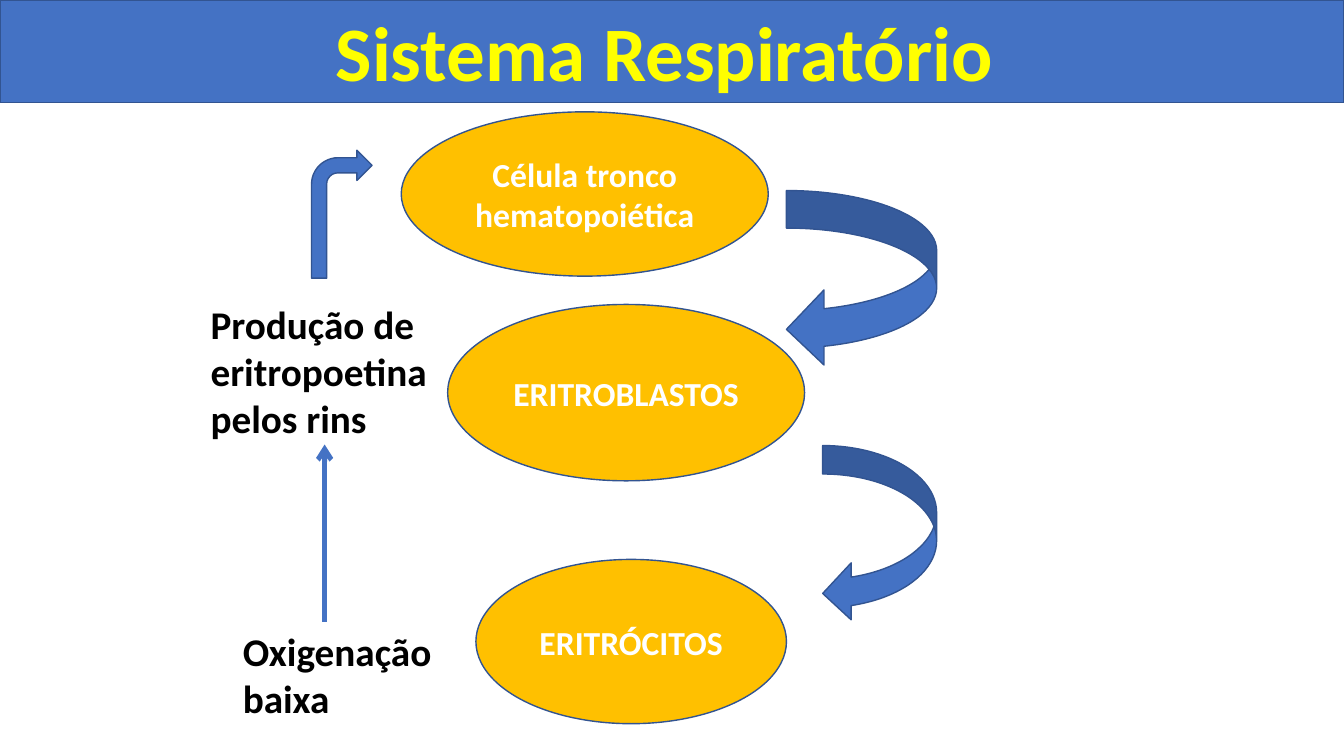
from dataclasses import dataclass

from lxml.etree import SubElement
from pptx import Presentation
from pptx.dml.color import RGBColor
from pptx.enum.shapes import MSO_CONNECTOR, MSO_SHAPE
from pptx.enum.text import MSO_ANCHOR, PP_ALIGN
from pptx.oxml.ns import qn
from pptx.util import Inches, Pt


@dataclass(frozen=True)
class Theme:
    font: str = "Calibri"
    blue: RGBColor = RGBColor(0x44, 0x72, 0xC4)
    edge: RGBColor = RGBColor(0x32, 0x54, 0x91)
    gold: RGBColor = RGBColor(0xFF, 0xC0, 0x00)
    yellow: RGBColor = RGBColor(0xFF, 0xFF, 0x00)
    white: RGBColor = RGBColor(0xFF, 0xFF, 0xFF)
    black: RGBColor = RGBColor(0, 0, 0)
    title: int = 55
    label: int = 28
    cell: int = 24


THEME = Theme()

CELLS = [
    ("Célula tronco hematopoiética", (3.98, 1.11, 3.64, 1.63)),
    ("ERITROBLASTOS", (4.44, 3.02, 3.54, 1.75)),
    ("ERITRÓCITOS", (4.72, 5.55, 3.08, 1.63)),
]
LABELS = [
    ("Oxigenação baixa", (2.31, 6.17, 2.23, 1.04)),
    ("Produção de eritropoetina pelos rins", (1.99, 2.93, 2.45, 1.51)),
]
ARROWS = [
    (MSO_SHAPE.BENT_ARROW, (3.09, 1.49, 0.6, 1.27)),
    (MSO_SHAPE.CURVED_LEFT_ARROW, (7.8, 1.89, 1.49, 1.75)),
    (MSO_SHAPE.CURVED_LEFT_ARROW, (8.16, 4.42, 1.13, 1.75)),
]


def write(frame, text, size, color, align=PP_ALIGN.LEFT):
    frame.word_wrap = True
    para = frame.paragraphs[0]
    para.alignment = align
    run = para.add_run()
    run.text = text
    form = {"name": THEME.font, "size": Pt(size), "bold": True}
    for key, value in form.items():
        setattr(run.font, key, value)
    run.font.color.rgb = color


def add_form(slide, kind, box, fill):
    """Add a filled preset shape with the thin dark edge."""
    shape = slide.shapes.add_shape(kind, *map(Inches, box))
    shape.shadow.inherit = False
    shape.fill.solid()
    shape.fill.fore_color.rgb = fill
    shape.line.color.rgb = THEME.edge
    shape.line.width = Pt(1)
    return shape


def add_cell(slide, text, box):
    frame = add_form(slide, MSO_SHAPE.OVAL, box, THEME.gold).text_frame
    frame.vertical_anchor = MSO_ANCHOR.MIDDLE
    write(frame, text, THEME.cell, THEME.white, PP_ALIGN.CENTER)


def add_text(slide, text, box, *style):
    frame = slide.shapes.add_textbox(*map(Inches, box)).text_frame
    write(frame, text, *style)


def add_line(slide, start, end):
    """Add a straight connector with an open arrowhead at its end."""
    line = slide.shapes.add_connector(
        MSO_CONNECTOR.STRAIGHT, *map(Inches, start + end))
    line.line.color.rgb = THEME.blue
    line.line.width = Pt(3.5)
    SubElement(line.line._get_or_add_ln(), qn("a:tailEnd"), type="arrow")
    SubElement(line._element.spPr, qn("a:effectLst"))


def main():
    deck = Presentation()
    deck.slide_width, deck.slide_height = Inches(13.33), Inches(7.5)
    slide = deck.slides.add_slide(deck.slide_layouts[6])

    add_form(slide, MSO_SHAPE.RECTANGLE, (0, 0, 13.33, 1.02), THEME.blue)
    add_text(slide, "Sistema Respiratório", (1.67, 0, 9.84, 1.03),
             THEME.title, THEME.yellow, PP_ALIGN.CENTER)
    for text, box in LABELS:
        add_text(slide, text, box, THEME.label, THEME.black)
    add_line(slide, (3.22, 6.17), (3.22, 4.41))
    for text, box in CELLS:
        add_cell(slide, text, box)
    for kind, box in ARROWS:
        add_form(slide, kind, box, THEME.blue)

    deck.save("out.pptx")


if __name__ == "__main__":
    main()
